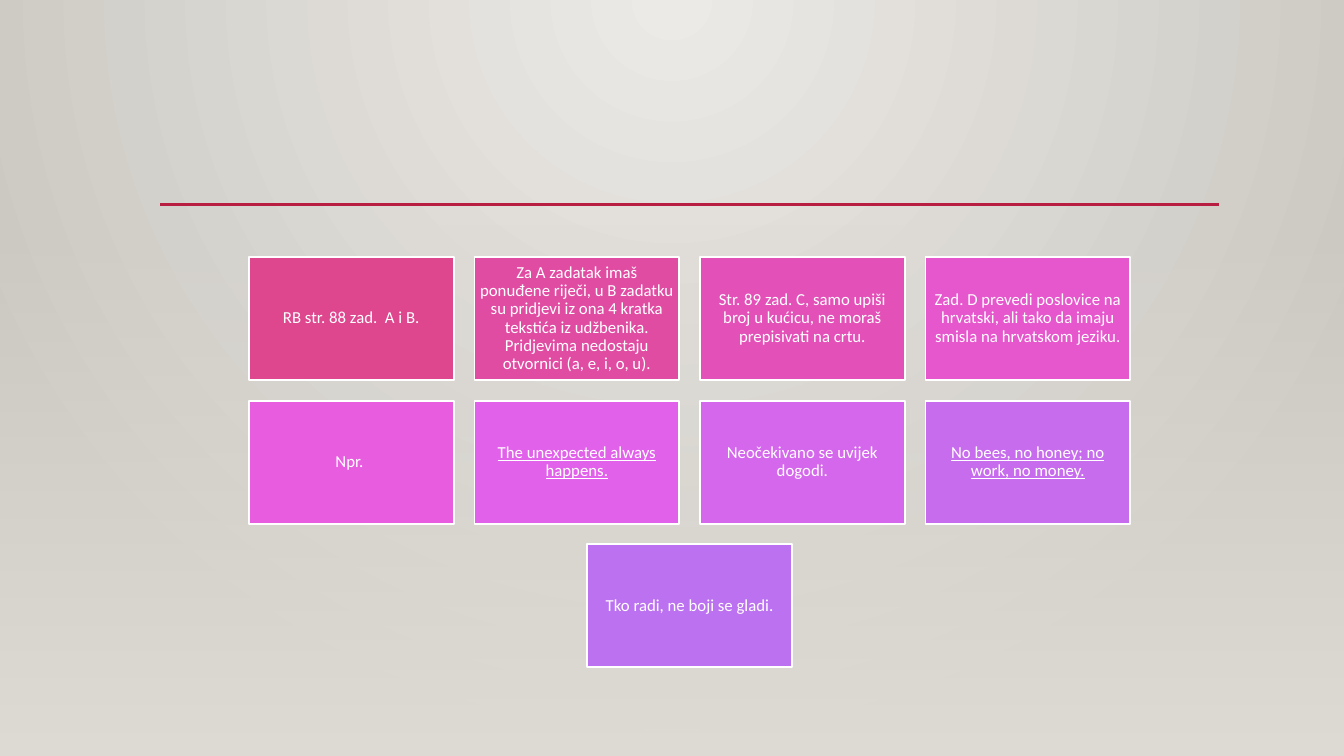
from lxml import etree
from pptx import Presentation
from pptx.dml.color import RGBColor
from pptx.enum.shapes import MSO_CONNECTOR, MSO_SHAPE
from pptx.enum.text import MSO_ANCHOR, PP_ALIGN
from pptx.oxml.ns import qn
from pptx.util import Inches, Pt

STRAIGHT = MSO_CONNECTOR.STRAIGHT
RECTANGLE = MSO_SHAPE.RECTANGLE
MIDDLE = MSO_ANCHOR.MIDDLE
CENTER = PP_ALIGN.CENTER

SLIDE_WIDTH, SLIDE_HEIGHT = 13.33, 7.5
COLUMNS = 4
CARD_WIDTH, CARD_HEIGHT = 2.03, 1.22

# Text, fill, underlined
CARDS = [
    ("RB str. 88 zad.  A i B.", "DE478E", False),
    ("Za A zadatak imaš ponuđene riječi, u B zadatku su pridjevi iz ona 4 kratka "
     "tekstića iz udžbenika. Pridjevima nedostaju otvornici (a, e, i, o, u).", "E14CA3", False),
    ("Str. 89 zad. C, samo upiši broj u kućicu, ne moraš prepisivati na crtu.", "E351B8", False),
    ("Zad. D prevedi poslovice na hrvatski, ali tako da imaju smisla na hrvatskom jeziku.",
     "E656CC", False),
    ("Npr. ", "E85CE0", False),
    ("The unexpected always happens.", "E261EA", True),
    ("Neočekivano se uvijek dogodi.", "D467EC", False),
    ("No bees, no honey; no work, no money.", "C86CEE", True),
    ("Tko radi, ne boji se gladi.", "BC72F0", False),
]


def color(value):
    return RGBColor.from_string(value)


def set_gradient(fill, start, end):
    fill.gradient()
    for stop, value in zip(fill.gradient_stops, (start, end)):
        stop.color.rgb = color(value)


def write_text(shape, text, size=12, font="Calibri", text_color="FFFFFF", underline=False):
    frame = shape.text_frame
    frame.word_wrap = True
    frame.vertical_anchor = MIDDLE
    frame.margin_left = frame.margin_right = Inches(0.05)
    frame.margin_top = frame.margin_bottom = Inches(0.05)
    paragraph = frame.paragraphs[0]
    paragraph.alignment = CENTER
    paragraph.line_spacing = 0.9
    run = paragraph.add_run()
    run.text = text
    run.font.size = Pt(size)
    run.font.name = font
    run.font.underline = underline
    run.font.color.rgb = color(text_color)


def add_backdrop(slide):
    # Radial light from the top centre
    set_gradient(slide.background.fill, "ECEAE7", "CAC7C1")
    gradient = slide.element.find(".//" + qn("a:gradFill"))
    linear = gradient.find(qn("a:lin"))
    radial = etree.Element(qn("a:path"), path="circle")
    etree.SubElement(radial, qn("a:fillToRect"), l="43000", t="0", r="43000", b="100000")
    gradient.replace(linear, radial)


def add_floor(slide, left, top, width, height):
    # Veil that fades in towards the bottom
    floor = slide.shapes.add_shape(RECTANGLE, *map(Inches, (left, top, width, height)))
    floor.shadow.inherit = False
    floor.line.fill.background()
    set_gradient(floor.fill, "DFDBD5", "DFDBD5")
    floor.fill.gradient_angle = 270
    first_stop = floor.element.find(".//" + qn("a:srgbClr"))
    etree.SubElement(first_stop, qn("a:alpha"), val="0")


def add_rule(slide, left, top, width):
    rule = slide.shapes.add_connector(
        STRAIGHT, Inches(left), Inches(top), Inches(left + width), Inches(top))
    rule.line.color.rgb = color("B71E42")
    rule.line.width = Pt(2.5)
    etree.SubElement(rule.element.spPr, qn("a:effectLst"))


def add_card(slide, left, top, text, fill, underline):
    card = slide.shapes.add_shape(
        RECTANGLE, *map(Inches, (left, top, CARD_WIDTH, CARD_HEIGHT)))
    card.shadow.inherit = False
    card.fill.solid()
    card.fill.fore_color.rgb = color(fill)
    card.line.color.rgb = color("FFFFFF")
    card.line.width = Pt(1.25)
    write_text(card, text, underline=underline)


def add_card_grid(slide, left, top, width, height):
    rows = [CARDS[i:i + COLUMNS] for i in range(0, len(CARDS), COLUMNS)]
    step_x = (width - CARD_WIDTH) / (COLUMNS - 1)
    step_y = (height - CARD_HEIGHT) / (len(rows) - 1)
    for row_index, row in enumerate(rows):
        # A short row is centred
        row_left = left + (COLUMNS - len(row)) * step_x / 2
        for column, card in enumerate(row):
            add_card(slide, row_left + column * step_x, top + row_index * step_y, *card)


def main():
    presentation = Presentation()
    presentation.slide_width = Inches(SLIDE_WIDTH)
    presentation.slide_height = Inches(SLIDE_HEIGHT)
    slide = presentation.slides.add_slide(presentation.slide_layouts[6])
    add_backdrop(slide)
    add_rule(slide, 1.59, 2.03, 10.5)
    add_floor(slide, 0, 2.21, SLIDE_WIDTH, SLIDE_HEIGHT - 2.21)
    add_card_grid(slide, 2.47, 2.55, 8.74, 4.07)
    presentation.save("out.pptx")


if __name__ == "__main__":
    main()
